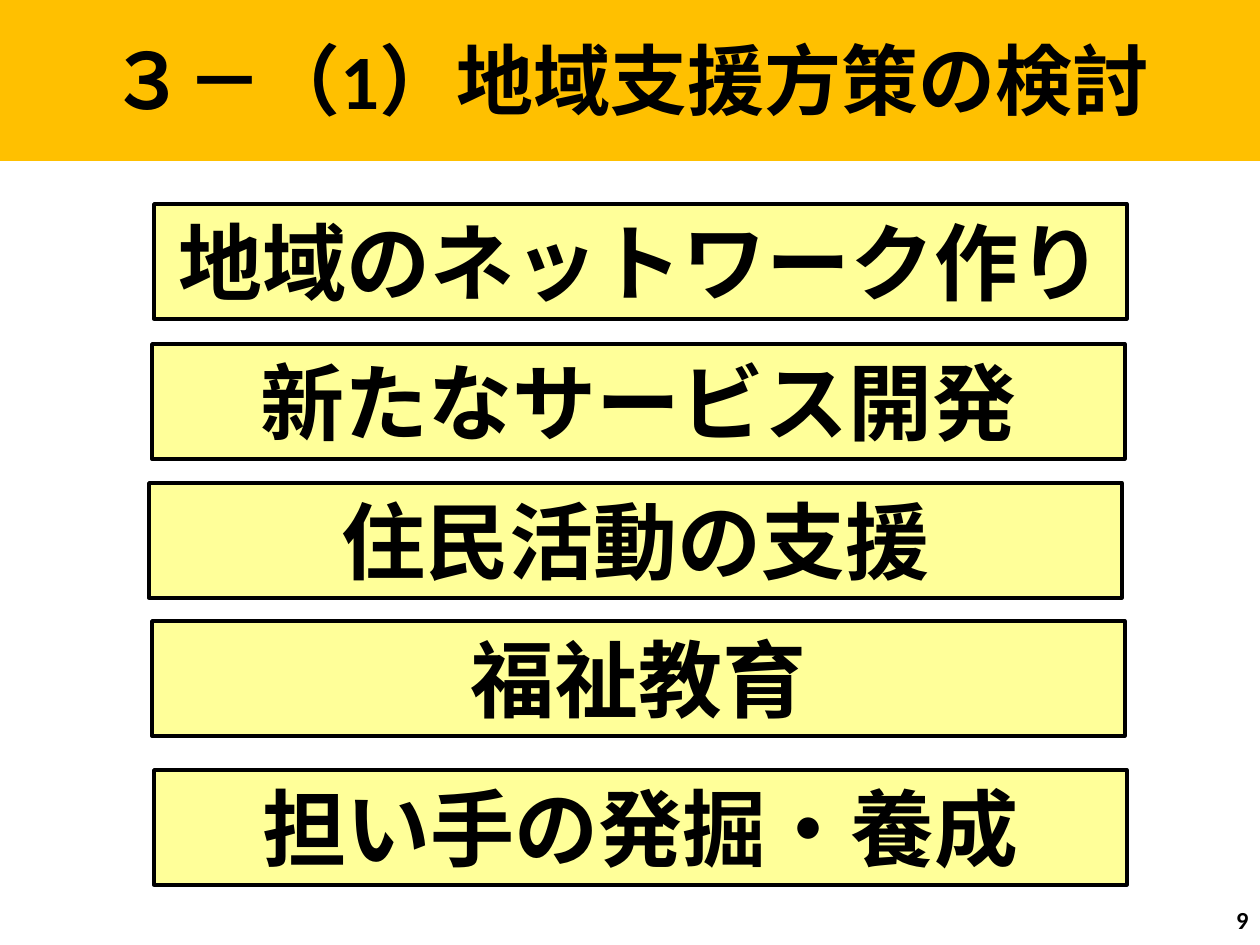
import pptx
import pptx.dml.color
import pptx.enum.shapes
import pptx.enum.text
import pptx.util

PIXELS_PER_INCH = 126


def px(length):
    return pptx.util.Emu(round(length * 914400 / PIXELS_PER_INCH))


def color(hex_string):
    return pptx.dml.color.RGBColor.from_string(hex_string)


ALIGN = pptx.enum.text.PP_ALIGN
ANCHOR = pptx.enum.text.MSO_ANCHOR
RECTANGLE = pptx.enum.shapes.MSO_SHAPE.RECTANGLE

presentation = pptx.Presentation()
presentation.slide_width = px(1260)
presentation.slide_height = px(945)
slide = presentation.slides.add_slide(presentation.slide_layouts[6])

# Text jobs: shape, text, font, size, alignment, anchor
texts = []

# Measure boxes
measures = [
    (154, 204, "地域のネットワーク作り"),
    (152, 344, "新たなサービス開発"),
    (149, 483, "住民活動の支援"),
    (152, 621, "福祉教育"),
    (154, 770, "担い手の発掘・養成"),
]
for left, top, measure in measures:
    box = slide.shapes.add_shape(RECTANGLE, px(left), px(top), px(973), px(115))
    box.shadow.inherit = False
    box.fill.solid()
    box.fill.fore_color.rgb = color("FFFF99")
    box.line.color.rgb = color("000000")
    box.line.width = pptx.util.Pt(2)
    box.text_frame.auto_size = pptx.enum.text.MSO_AUTO_SIZE.SHAPE_TO_FIT_TEXT
    texts.append((box, measure, "Arial", 48, ALIGN.CENTER, ANCHOR.TOP))

# Title band
band = slide.shapes.add_shape(RECTANGLE, px(0), px(-4), px(1260), px(165))
band.shadow.inherit = False
band.fill.solid()
band.fill.fore_color.rgb = color("FFC000")
band.line.fill.background()
texts.append((band, "３－（1）地域支援方策の検討", "Calibri", 44, ALIGN.CENTER, ANCHOR.MIDDLE))

# Page number
page_number = slide.shapes.add_textbox(px(1191), px(895), px(70), px(50))
texts.append((page_number, "9", "Calibri", 14, ALIGN.RIGHT, ANCHOR.MIDDLE))

# Wording of every shape
for shape, text, font_name, size, alignment, anchor in texts:
    frame = shape.text_frame
    frame.word_wrap = True
    frame.vertical_anchor = anchor
    paragraph = frame.paragraphs[0]
    paragraph.alignment = alignment
    run = paragraph.add_run()
    run.text = text
    run.font.name = font_name
    run.font.size = pptx.util.Pt(size)
    run.font.bold = True
    run.font.color.rgb = color("000000")

presentation.save("out.pptx")
